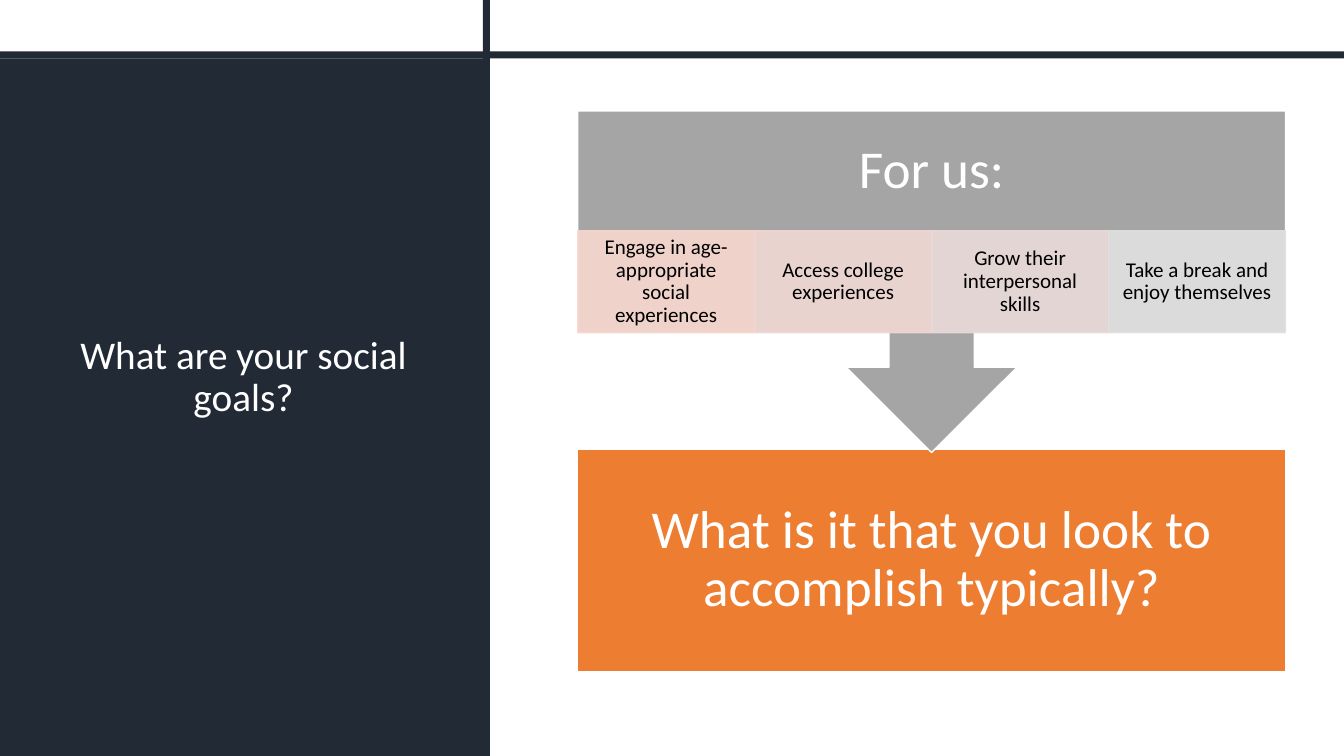
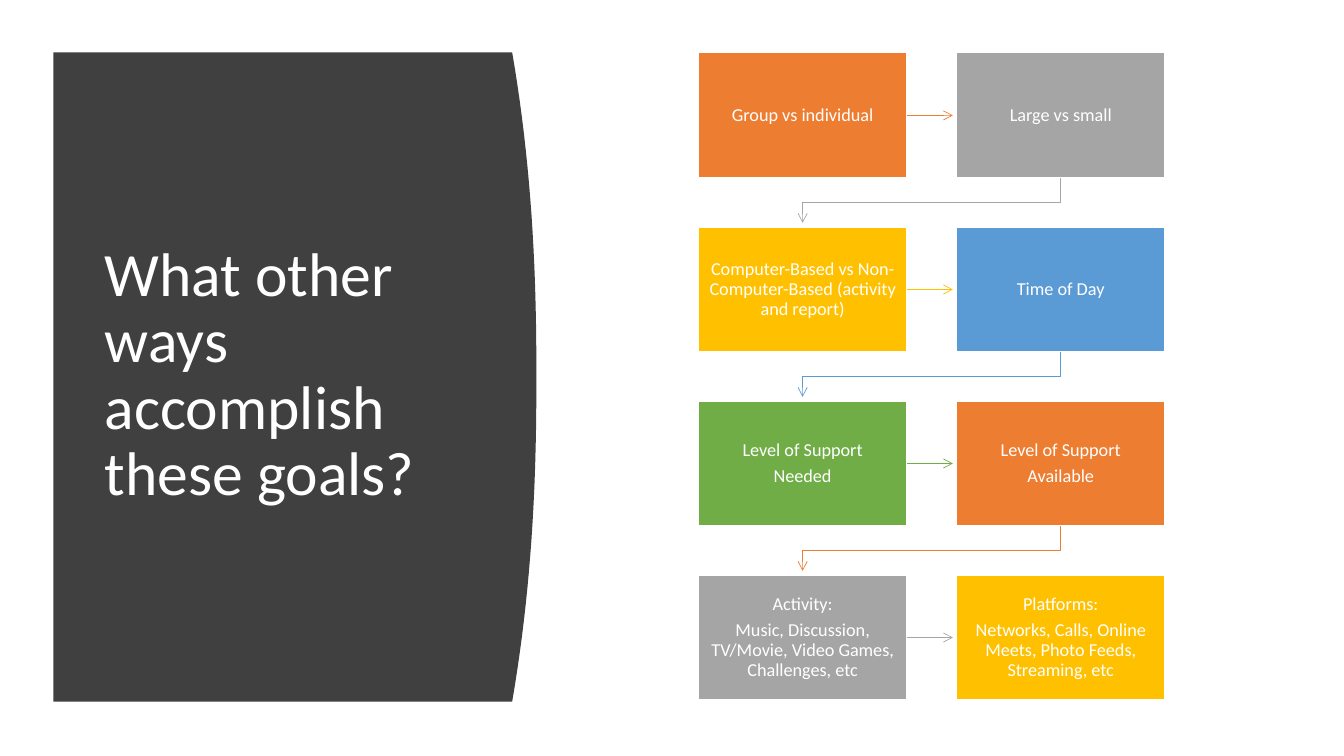
from lxml.etree import SubElement
from pptx import Presentation
from pptx.dml.color import RGBColor
from pptx.enum.shapes import MSO_CONNECTOR, MSO_SHAPE
from pptx.enum.text import MSO_ANCHOR, MSO_AUTO_SIZE, PP_ALIGN
from pptx.oxml.ns import qn
from pptx.util import Inches, Pt

COLORS = {
    "navy": "222A35", "charcoal": "404040", "white": "FFFFFF", "black": "000000",
    "orange": "ED7D31", "gray": "A5A5A5", "gold": "FFC000", "blue": "5B9BD5",
    "green": "70AD47", "blush": "F8D7CE", "rose": "F1D8D4", "mauve": "E9DBDA",
    "silver": "E1E1E1",
}
RGB = {name: RGBColor.from_string(value) for name, value in COLORS.items()}
FRAME_FORMAT = {
    "word_wrap": True,
    "auto_size": MSO_AUTO_SIZE.NONE,
    "vertical_anchor": MSO_ANCHOR.MIDDLE,
}
TITLE_INSETS = (0.1, 0.05, 0.1, 0.05)


def write(shape, lines, size, insets, color="white", align=PP_ALIGN.CENTER, after=0.35):
    frame = shape.text_frame
    frame.text = "\n".join(lines)
    sides = ("margin_left", "margin_top", "margin_right", "margin_bottom")
    margins = dict(zip(sides, map(Inches, insets)))
    for attribute, value in {**FRAME_FORMAT, **margins}.items():
        setattr(frame, attribute, value)
    paragraph_format = {"alignment": align, "line_spacing": 0.9, "space_after": Pt(size * after)}
    for paragraph in frame.paragraphs:
        for attribute, value in paragraph_format.items():
            setattr(paragraph, attribute, value)
        for attribute, value in {"name": "Calibri", "size": Pt(size), "bold": False}.items():
            setattr(paragraph.font, attribute, value)
        paragraph.font.color.rgb = RGB[color]


def add_block(slide, preset, place, fill, border=None, width=1, alpha=None):
    block = slide.shapes.add_shape(preset, *map(Inches, place))
    block.shadow.inherit = False
    block.fill.solid()
    block.fill.fore_color.rgb = RGB[fill]
    if border:
        block.line.color.rgb = RGB[border]
        block.line.width = Pt(width)
    else:
        block.line.fill.background()
    if alpha:
        for color in block._element.spPr.iter(qn("a:srgbClr")):
            SubElement(color, qn("a:alpha")).set("val", str(alpha * 1000))
    return block


prs = Presentation()
prs.slide_width, prs.slide_height = Inches(13.33), Inches(7.5)
title_only = prs.slide_layouts[5]

goals_slide = prs.slides.add_slide(title_only)
ways_slide = prs.slides.add_slide(title_only)

add_block(goals_slide, MSO_SHAPE.RECTANGLE, (0, 0.58, 4.86, 6.92), "navy")

top, bottom, edge, bulge = 0.52, 6.96, 5.08, 0.24
steps = 40
curve = []
for step in range(steps + 1):
    offset = abs(2 * step / steps - 1)
    curve.append((Inches(edge + bulge * (1 - offset ** 2.3)),
                  Inches(top + (bottom - top) * step / steps)))
outline = ways_slide.shapes.build_freeform(Inches(0.53), Inches(top), scale=1.0)
outline.add_line_segments(curve + [(Inches(0.53), Inches(bottom))], close=True)
curved_panel = outline.convert_to_shape()
curved_panel.shadow.inherit = False
curved_panel.fill.solid()
curved_panel.fill.fore_color.rgb = RGB["charcoal"]
curved_panel.line.fill.background()

titles = [
    (goals_slide, "What are your social goals?", (0.66, 0.84, 3.51, 5.82), 28, PP_ALIGN.CENTER),
    (ways_slide, "What other ways accomplish these goals?", (0.94, 1.11, 3.74, 5.24), 44, PP_ALIGN.LEFT),
]
for slide, wording, place, size, align in titles:
    title = slide.shapes.title
    for attribute, value in zip(("left", "top", "width", "height"), place):
        setattr(title, attribute, Inches(value))
    write(title, [wording], size, TITLE_INSETS, align=align, after=0)
    slide.shapes._spTree.append(title._element)

for band in [(4.79, 0, 0.07, 7.5), (0, 0.51, 13.33, 0.07)]:
    add_block(goals_slide, MSO_SHAPE.RECTANGLE, band, "navy")

question = add_block(goals_slide, MSO_SHAPE.RECTANGLE, (5.73, 4.46, 7.02, 2.2), "orange", "white")
write(question, ["What is it that you look to accomplish typically?"], 38, (0.3,) * 4)

for_us = add_block(goals_slide, MSO_SHAPE.DOWN_ARROW_CALLOUT, (5.73, 1.1, 7.02, 3.39), "gray", "white")
write(for_us, ["For us:"], 38, (0.3, 0.3, 0.3, 1.31))

goals = [
    ("Engage in age-appropriate social experiences", "blush"),
    ("Access college experiences", "rose"),
    ("Grow their interpersonal skills", "mauve"),
    ("Take a break and enjoy themselves", "silver"),
]
goal_width = 7.02 / len(goals)
for column, (wording, tint) in enumerate(goals):
    place = (5.73 + column * goal_width, 2.29, goal_width, 1.01)
    goal = add_block(goals_slide, MSO_SHAPE.RECTANGLE, place, tint, tint, alpha=90)
    write(goal, [wording], 15, (0.12, 0.02, 0.12, 0.02), "black")

ways = [
    (["Group vs individual"], "orange"),
    (["Large vs small"], "gray"),
    (["Computer-Based vs Non-Computer-Based (activity and report)"], "gold"),
    (["Time of Day"], "blue"),
    (["Level of Support", "Needed"], "green"),
    (["Level of Support", "Available"], "orange"),
    (["Activity:", "Music, Discussion, TV/Movie, Video Games, Challenges, etc"], "gray"),
    (["Platforms:", "Networks, Calls, Online Meets, Photo Feeds, Streaming, etc"], "gold"),
]
way_width, way_height = 2.08, 1.25
column_pitch, row_pitch = 2.56, 5.18 / 3
for index, (lines, color) in enumerate(ways):
    row, column = divmod(index, 2)
    left, top = 6.92 + column * column_pitch, 0.52 + row * row_pitch
    way = add_block(ways_slide, MSO_SHAPE.RECTANGLE, (left, top, way_width, way_height), color, "white", 1.5)
    write(way, lines, 13, (0.1, 0.11, 0.1, 0.11))
    if index == len(ways) - 1:
        break
    if column == 0:
        middle = top + way_height / 2
        ends = (left + way_width, middle, left + way_width + 0.45, middle)
        arrow = ways_slide.shapes.add_connector(MSO_CONNECTOR.STRAIGHT, *map(Inches, ends))
        arrow.begin_connect(way, 3)
    else:
        drop = 0.44
        center_x = left + way_width / 2 - column_pitch / 2
        center_y = top + way_height + drop / 2
        ends = (center_x - drop / 2, center_y - column_pitch / 2,
                center_x + drop / 2, center_y + column_pitch / 2)
        arrow = ways_slide.shapes.add_connector(MSO_CONNECTOR.ELBOW, *map(Inches, ends))
        properties = arrow._element.spPr
        properties.find(qn("a:xfrm")).set("rot", "5400000")
        bend = SubElement(properties.find(qn("a:prstGeom")).find(qn("a:avLst")), qn("a:gd"))
        bend.set("name", "adj1")
        bend.set("fmla", "val 54500")
    arrow.line.color.rgb = RGB[color]
    arrow.line.width = Pt(0.5)
    SubElement(arrow.line._get_or_add_ln(), qn("a:tailEnd")).set("type", "arrow")
    SubElement(arrow._element.spPr, qn("a:effectLst"))

prs.save("out.pptx")
